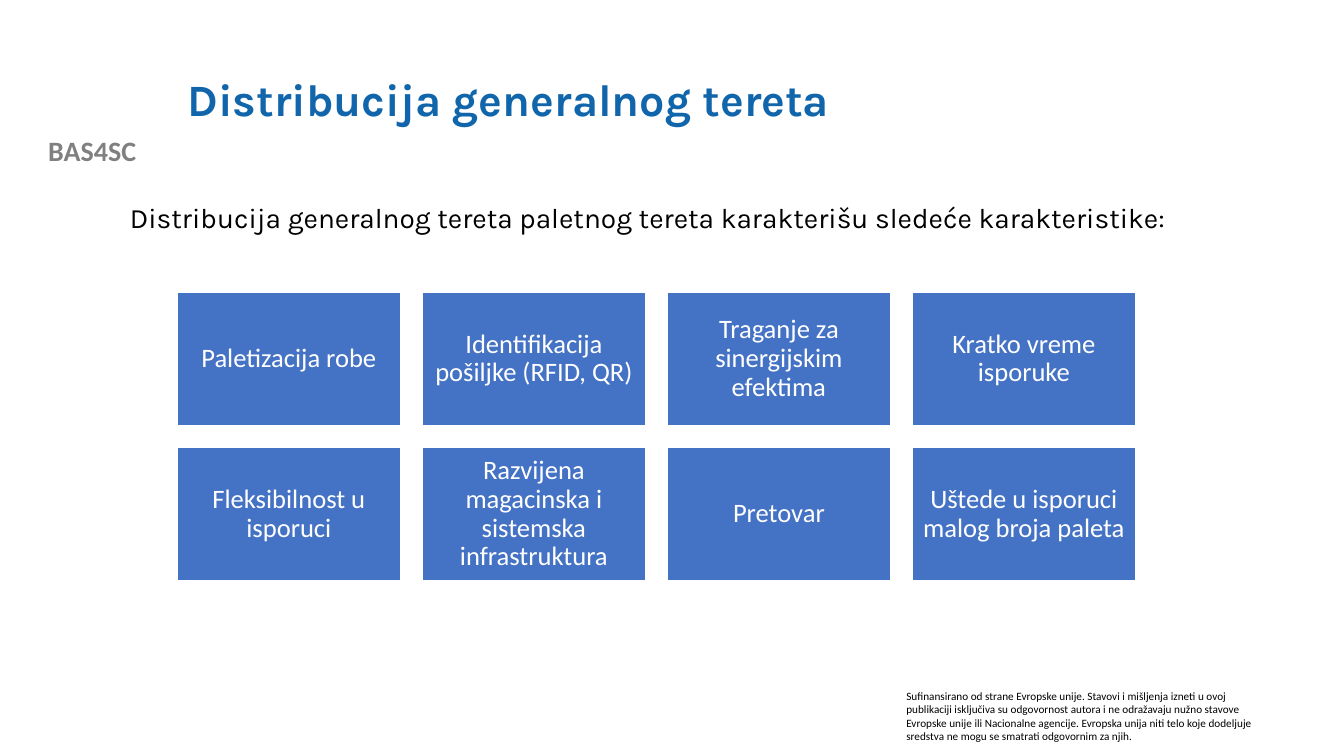
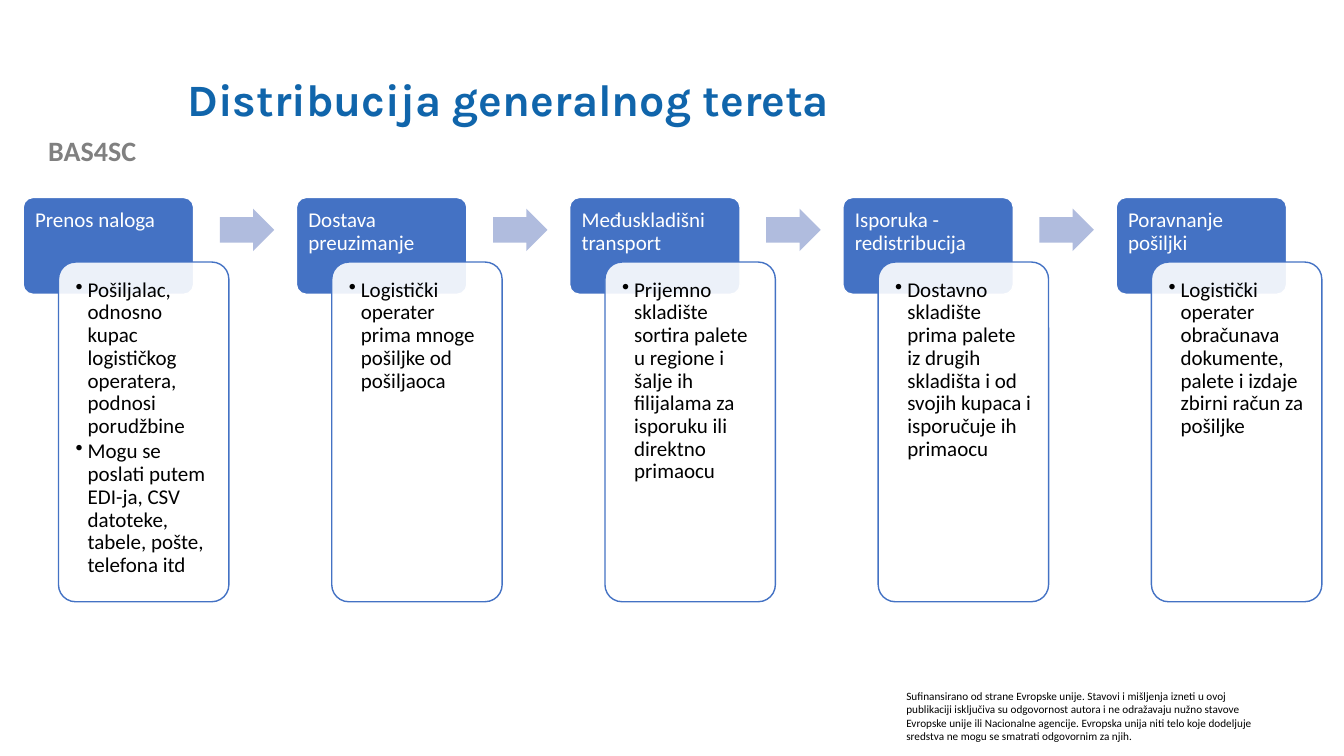
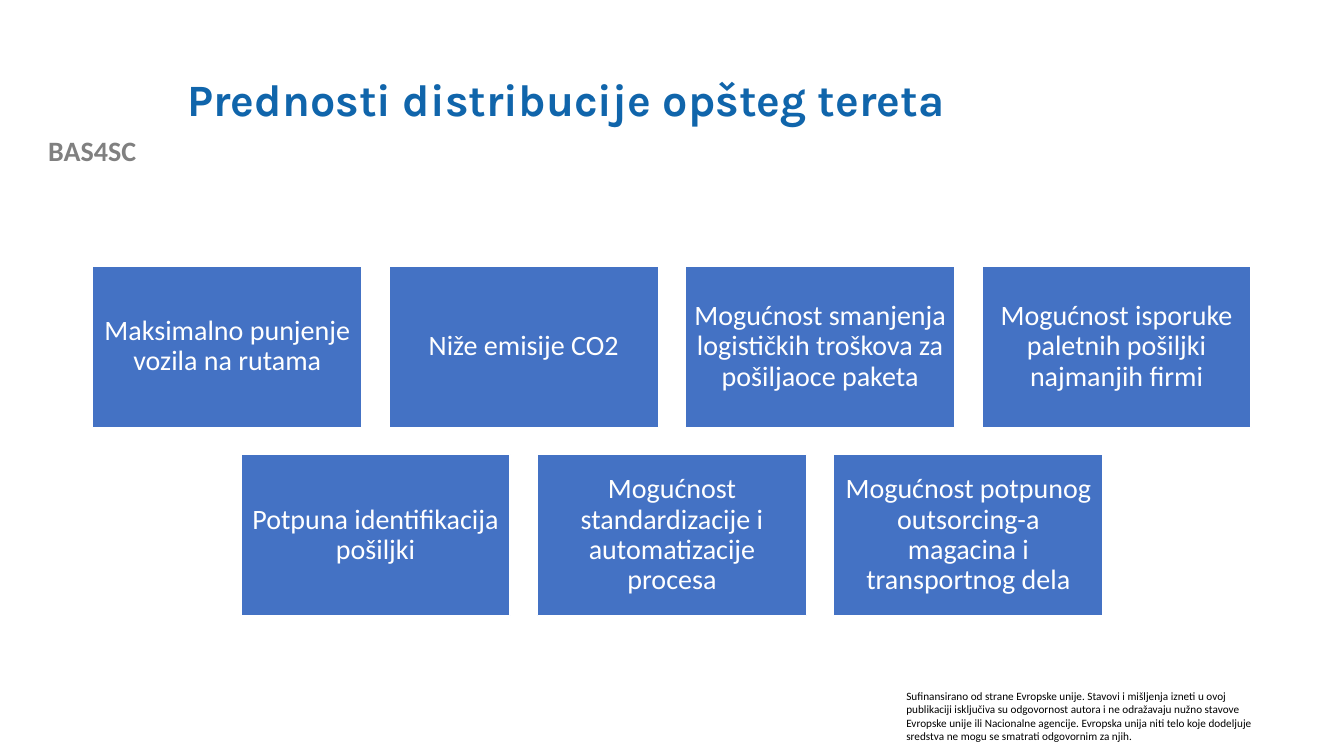
import lxml.etree
import pptx
import pptx.dml.color
import pptx.enum.shapes
import pptx.enum.text
import pptx.oxml.ns
import pptx.util

PX = 9144  # 100 px to the inch
COLOURS = {
    "title": "1065AB",
    "tile": "4472C4",
    "arrow": "B0BCDE",
    "brand": "808080",
    "white": "FFFFFF",
    "black": "000000",
}
BODY_FONT = "Calibri"
HEAD_FONT = "Karla"
SHAPES = pptx.enum.shapes.MSO_SHAPE
ALIGN = pptx.enum.text.PP_ALIGN
ANCHOR = pptx.enum.text.MSO_ANCHOR

FUNDING_NOTE = (
    "Sufinansirano od strane Evropske unije. Stavovi i mišljenja izneti u ovoj "
    "publikaciji isključiva su odgovornost autora i ne odražavaju nužno stavove "
    "Evropske unije ili Nacionalne agencije. Evropska unija niti telo koje dodeljuje "
    "sredstva ne mogu se smatrati odgovornim za njih."
)
FEATURES = [
    ["Paletizacija robe", "Identifikacija pošiljke (RFID, QR)",
     "Traganje za sinergijskim efektima", "Kratko vreme isporuke"],
    ["Fleksibilnost u isporuci", "Razvijena magacinska i sistemska infrastruktura",
     "Pretovar", "Uštede u isporuci malog broja paleta"],
]
STEPS = [
    ("Prenos naloga",
     ["Pošiljalac, odnosno kupac logističkog operatera, podnosi porudžbine",
      "Mogu se poslati putem EDI-ja, CSV datoteke, tabele, pošte, telefona itd"]),
    ("Dostava preuzimanje",
     ["Logistički operater prima mnoge pošiljke od pošiljaoca"]),
    ("Međuskladišni transport",
     ["Prijemno skladište sortira palete u regione i šalje ih filijalama za "
      "isporuku ili direktno primaocu"]),
    ("Isporuka - redistribucija",
     ["Dostavno skladište prima palete iz drugih skladišta i od svojih kupaca "
      "i isporučuje ih primaocu"]),
    ("Poravnanje pošiljki",
     ["Logistički operater obračunava dokumente, palete i izdaje zbirni račun "
      "za pošiljke"]),
]
BENEFITS = [
    ["Maksimalno punjenje vozila na rutama", "Niže emisije CO2",
     "Mogućnost smanjenja logističkih troškova za pošiljaoce paketa",
     "Mogućnost isporuke paletnih pošiljki najmanjih firmi"],
    ["Potpuna identifikacija pošiljki",
     "Mogućnost standardizacije i automatizacije procesa",
     "Mogućnost potpunog outsorcing-a magacina i transportnog dela"],
]


def colour(name):
    return pptx.dml.color.RGBColor.from_string(COLOURS[name])


def emu(box):
    return [pptx.util.Emu(length * PX) for length in box]


def add_bullet(para, indent):
    props = para._p.get_or_add_pPr()
    props.set("marL", str(indent * PX))
    props.set("indent", str(-indent * PX))
    bullet = lxml.etree.SubElement(props, pptx.oxml.ns.qn("a:buChar"))
    bullet.set("char", "•")


def write(shape, lines, size, ink, font=BODY_FONT, bold=False, align=ALIGN.LEFT,
          anchor=ANCHOR.TOP, inset=None, spacing=0.9, bullet_indent=0):
    frame = shape.text_frame
    frame.word_wrap = True
    frame.vertical_anchor = anchor
    if inset is not None:
        frame.margin_left = frame.margin_right = pptx.util.Emu(inset * PX)
        frame.margin_top = frame.margin_bottom = pptx.util.Emu(inset * PX)
    for index, line in enumerate(lines):
        para = frame.add_paragraph() if index else frame.paragraphs[0]
        if bullet_indent:
            add_bullet(para, bullet_indent)
            para.space_after = pptx.util.Pt(2)
        para.alignment = align
        para.line_spacing = spacing
        span = para.add_run()
        span.text = line
        span.font.name = font
        span.font.size = pptx.util.Pt(size)
        span.font.bold = bold
        span.font.color.rgb = colour(ink)


def add_text(page, box, line, size, ink, **style):
    write(page.shapes.add_textbox(*emu(box)), [line], size, ink, **style)


def add_block(page, kind, box, fill, line=None, adjustments=()):
    shape = page.shapes.add_shape(kind, *emu(box))
    shape.shadow.inherit = False
    shape.fill.solid()
    shape.fill.fore_color.rgb = colour(fill)
    if line:
        shape.line.color.rgb = colour(line)
        shape.line.width = pptx.util.Pt(1)
    else:
        shape.line.fill.background()
    for index, value in enumerate(adjustments):
        shape.adjustments[index] = value
    return shape


def set_opacity(shape, percent):
    tint = shape._element.spPr.find(".//" + pptx.oxml.ns.qn("a:srgbClr"))
    alpha = lxml.etree.SubElement(tint, pptx.oxml.ns.qn("a:alpha"))
    alpha.set("val", str(percent * 1000))


def add_page(deck, title):
    """Blank page with the shared project name, funding note and title."""
    page = deck.slides.add_slide(deck.slide_layouts[6])
    add_text(page, (0, 128, 183, 44), "BAS4SC", 20, "brand", bold=True,
             align=ALIGN.CENTER, spacing=1.0)
    add_text(page, (889, 679, 375, 64), FUNDING_NOTE, 8, "black", spacing=1.0)
    add_text(page, (176, 40, 1066, 122), title, 32, "title", font=HEAD_FONT,
             bold=True, anchor=ANCHOR.MIDDLE)
    return page


def add_tile_grid(page, box, rows, gap, size):
    """Equal tiles; a shorter row is centred in the box."""
    left, top, width, height = box
    columns = max(len(row) for row in rows)
    tile_width = (width - gap * (columns - 1)) // columns
    tile_height = (height - gap * (len(rows) - 1)) // len(rows)
    for row_index, row in enumerate(rows):
        row_left = left + (columns - len(row)) * (tile_width + gap) // 2
        tile_top = top + row_index * (tile_height + gap)
        for column, label in enumerate(row):
            tile_left = row_left + column * (tile_width + gap)
            tile = add_block(page, SHAPES.RECTANGLE,
                             (tile_left, tile_top, tile_width, tile_height),
                             "tile", "white")
            write(tile, [label], size, "white", align=ALIGN.CENTER,
                  anchor=ANCHOR.MIDDLE, inset=8)


def add_step(page, box, heading, details):
    """Heading card with a detail card overlapping its lower right."""
    left, top, width, height = box
    card_width = width - 35
    head = add_block(page, SHAPES.ROUNDED_RECTANGLE, (left, top, card_width, 96),
                     "tile", "white", [0.1])
    write(head, [heading], 15, "white", inset=9)
    card = add_block(page, SHAPES.ROUNDED_RECTANGLE,
                     (left + 35, top + 64, card_width, height - 64),
                     "white", "tile", [0.1])
    set_opacity(card, 90)
    write(card, details, 15, "black", inset=12, bullet_indent=12)


def add_process(page, box, steps, pitch):
    left, top, width, height = box
    step_width = width - pitch * (len(steps) - 1)
    for index, (heading, details) in enumerate(steps):
        step_left = left + index * pitch
        add_step(page, (step_left, top, step_width, height), heading, details)
        if index < len(steps) - 1:
            add_block(page, SHAPES.RIGHT_ARROW, (step_left + 195, top + 11, 54, 42),
                      "arrow", adjustments=[0.6, 0.5])


def main():
    deck = pptx.Presentation()
    deck.slide_width, deck.slide_height = emu((1333, 750))

    # Features of general cargo distribution
    page = add_page(deck, "Distribucija generalnog tereta")
    add_text(page, (119, 198, 1150, 440),
             "Distribucija generalnog tereta paletnog tereta karakterišu sledeće "
             "karakteristike:", 20, "black", font=HEAD_FONT)
    add_tile_grid(page, (176, 290, 950, 286), FEATURES, 22, 19)

    # Process steps
    page = add_page(deck, "Distribucija generalnog tereta")
    add_process(page, (23, 196, 1288, 401), STEPS, 271)

    # Benefits
    page = add_page(deck, "Prednosti distribucije opšteg tereta")
    add_tile_grid(page, (92, 264, 1149, 347), BENEFITS, 27, 20)

    deck.save("out.pptx")


if __name__ == "__main__":
    main()
